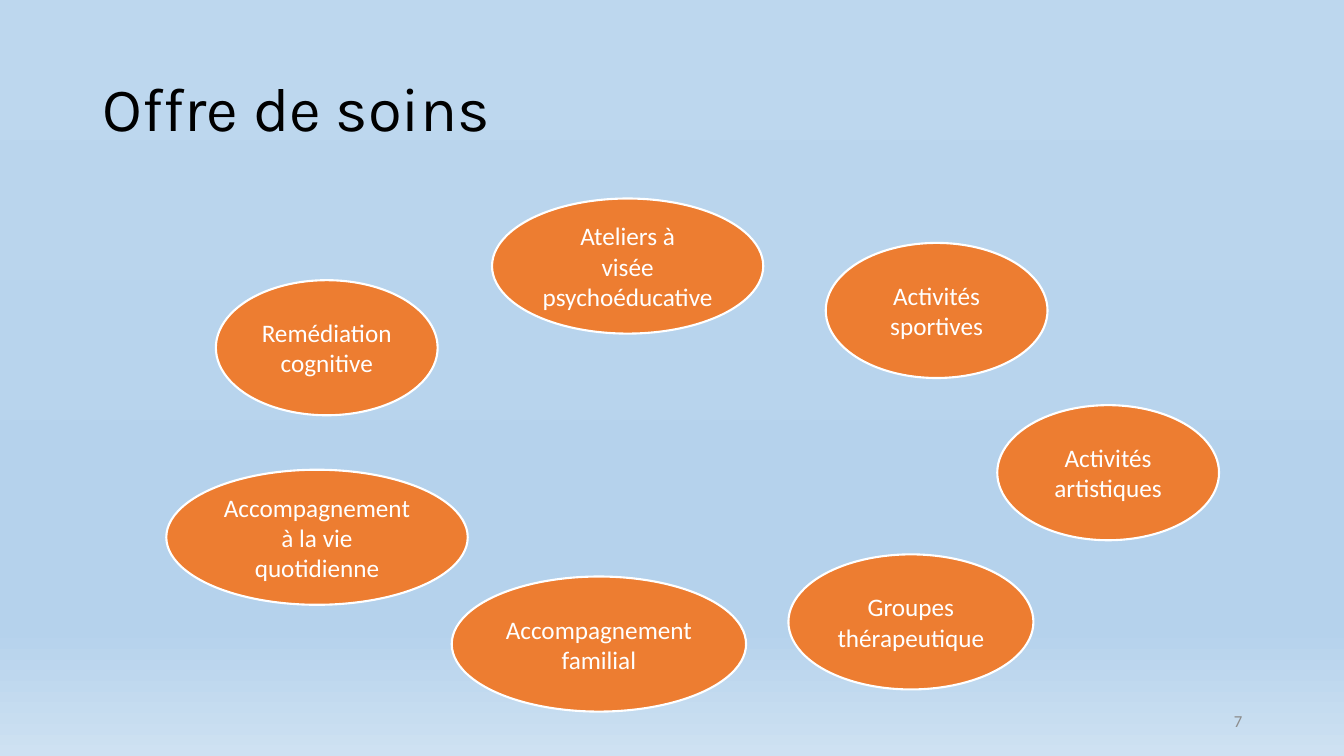
"""Build the slide that presents the range of care as a ring of ellipses."""
from dataclasses import dataclass

from lxml import etree
from pptx import Presentation
from pptx.dml.color import RGBColor
from pptx.enum.shapes import MSO_SHAPE
from pptx.enum.text import MSO_ANCHOR, PP_ALIGN
from pptx.oxml.ns import qn
from pptx.util import Inches, Pt

ELLIPSE = MSO_SHAPE.OVAL
MIDDLE = MSO_ANCHOR.MIDDLE
LEFT, CENTER, RIGHT = PP_ALIGN.LEFT, PP_ALIGN.CENTER, PP_ALIGN.RIGHT

TITLE = "Offre de soins"
PAGE_NUMBER = "7"

# Centre x, centre y and width, in percent of the slide
CARE_OFFERS = [
    ("Remédiation cognitive", 24.31, 46, 16.5),
    ("Ateliers à\nvisée psychoéducative", 46.7, 35.2, 20.18),
    ("Activités sportives", 69.69, 41.07, 16.5),
    ("Activités artistiques", 82.45, 62.53, 16.5),
    ("Accompagnement à la vie quotidienne", 23.59, 71.07, 22.43),
    ("Groupes thérapeutique", 67.78, 82.27, 18.23),
    ("Accompagnement familial", 44.56, 85.2, 21.9),
]
OFFER_HEIGHT = 17.87
TITLE_BOX = (6.9, 5.07, 86.27, 19.33)
NUMBER_BOX = (70.67, 92.67, 22.5, 5.33)


@dataclass(frozen=True)
class Theme:
    """Colours, fonts and sizes of the slide."""
    background: tuple = ((0, "BDD7EE"), (74, "B5D2EC"), (83, "B5D2EC"), (100, "CEE1F2"))
    offer: str = "ED7D31"
    light: str = "FFFFFF"
    dark: str = "000000"
    muted: str = "8C8C8C"
    title_font: str = "Karla"
    body_font: str = "Calibri"
    title_size: int = 44
    offer_size: int = 18
    number_size: int = 12
    outline: float = 1.5


THEME = Theme()
WIDTH, HEIGHT = Inches(13.33), Inches(7.5)


def to_lengths(left, top, width, height):
    """Turn percentages of the slide into lengths."""
    return [int(share * side / 100) for share, side in
            ((left, WIDTH), (top, HEIGHT), (width, WIDTH), (height, HEIGHT))]


def write_text(shape, text, *, size, color, font=THEME.body_font, align=CENTER, spacing=1.0):
    """Fill a shape with formatted paragraphs, one per line of text."""
    frame = shape.text_frame
    frame.text = text
    frame.word_wrap = True
    frame.vertical_anchor = MIDDLE
    for paragraph in frame.paragraphs:
        paragraph.alignment = align
        paragraph.line_spacing = spacing
        for run in paragraph.runs:
            run.font.name = font
            run.font.size = Pt(size)
            run.font.color.rgb = RGBColor.from_string(color)


def paint_background(slide):
    """Give the slide a vertical gradient."""
    fill = slide.background.fill
    fill.gradient()
    fill.gradient_angle = 270
    stops = slide.background._cSld.find(".//" + qn("a:gsLst"))
    for stop in list(stops):
        stops.remove(stop)
    for position, color in THEME.background:
        stop = etree.SubElement(stops, qn("a:gs"), pos=str(position * 1000))
        etree.SubElement(stop, qn("a:srgbClr"), val=color)


def add_offer(slide, text, center_x, center_y, width):
    """Add one ellipse around its centre."""
    box = to_lengths(center_x - width / 2, center_y - OFFER_HEIGHT / 2, width, OFFER_HEIGHT)
    ellipse = slide.shapes.add_shape(ELLIPSE, *box)
    ellipse.shadow.inherit = False
    ellipse.fill.solid()
    ellipse.fill.fore_color.rgb = RGBColor.from_string(THEME.offer)
    ellipse.line.color.rgb = RGBColor.from_string(THEME.light)
    ellipse.line.width = Pt(THEME.outline)
    write_text(ellipse, text, size=THEME.offer_size, color=THEME.light)


def main():
    """Build and save the presentation."""
    presentation = Presentation()
    presentation.slide_width, presentation.slide_height = WIDTH, HEIGHT
    slide = presentation.slides.add_slide(presentation.slide_layouts[5])
    paint_background(slide)

    title = slide.shapes.title
    title.left, title.top, title.width, title.height = to_lengths(*TITLE_BOX)
    write_text(title, TITLE, size=THEME.title_size, color=THEME.dark,
               font=THEME.title_font, align=LEFT, spacing=0.9)

    for offer in CARE_OFFERS:
        add_offer(slide, *offer)

    number = slide.shapes.add_textbox(*to_lengths(*NUMBER_BOX))
    write_text(number, PAGE_NUMBER, size=THEME.number_size, color=THEME.muted, align=RIGHT)

    presentation.save("out.pptx")


if __name__ == "__main__":
    main()
